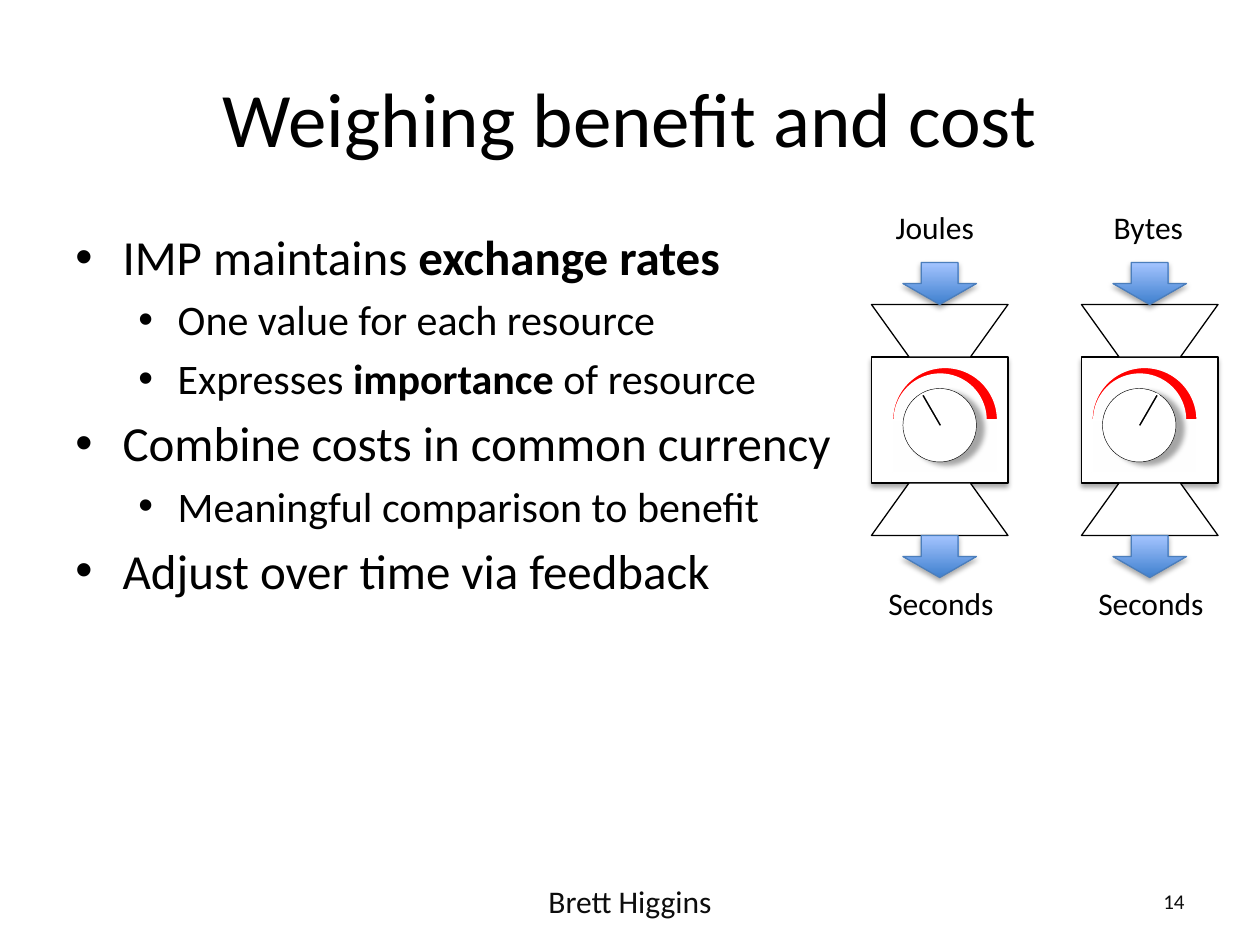
from lxml import etree
from pptx import Presentation, util as u
from pptx.dml.color import RGBColor
from pptx.enum import shapes, text
from pptx.oxml import ns

Pt = u.Pt
Kind = shapes.MSO_SHAPE
Align = text.PP_ALIGN
color = RGBColor.from_string

deck = Presentation()
deck.slide_width, deck.slide_height = Pt(720), Pt(540)
page = deck.slides.add_slide(deck.slide_layouts[5])


def add_shape(kind, left, top, width, height, fill="FFFFFF", line="000000", weight=0.75, shadow=None):
    shape = page.shapes.add_shape(kind, Pt(left), Pt(top), Pt(width), Pt(height))
    shape.fill.solid()
    shape.fill.fore_color.rgb = color(fill)
    shape.line.color.rgb = color(line)
    shape.line.width = Pt(weight)
    shape.shadow.inherit = False
    if shadow:
        distance, angle = shadow
        effects = shape._element.spPr.find(ns.qn("a:effectLst"))
        outer = etree.SubElement(effects, ns.qn("a:outerShdw"), blurRad=str(Pt(3.1)),
                                 dist=str(Pt(distance)), dir=str(angle * 60000), rotWithShape="0")
        black = etree.SubElement(outer, ns.qn("a:srgbClr"), val="000000")
        etree.SubElement(black, ns.qn("a:alpha"), val="35000")
    return shape


def add_label(words, left, top, width, height, size=18, align=Align.LEFT, wrap=False,
              ink="000000", anchor=text.MSO_ANCHOR.TOP):
    box = page.shapes.add_textbox(Pt(left), Pt(top), Pt(width), Pt(height))
    box.text_frame.word_wrap = wrap
    box.text_frame.vertical_anchor = anchor
    para = box.text_frame.paragraphs[0]
    para.text = words
    para.alignment = align
    para.font.name, para.font.size = "Calibri", Pt(size)
    para.font.color.rgb = color(ink)


title = page.shapes.title
title.left, title.top, title.width, title.height = Pt(36), Pt(21.6), Pt(648), Pt(90)
title.text_frame.text = "Weighing benefit and cost"
title.text_frame.vertical_anchor = text.MSO_ANCHOR.MIDDLE
para = title.text_frame.paragraphs[0]
para.alignment = Align.CENTER
para.font.name, para.font.size = "Calibri", Pt(44)
para.font.color.rgb = color("000000")

bullets = [
    (0, [("IMP maintains ", False), ("exchange rates", True)]),
    (1, [("One value for each resource", False)]),
    (1, [("Expresses ", False), ("importance", True), (" of resource", False)]),
    (0, [("Combine costs in common currency", False)]),
    (1, [("Meaningful comparison to benefit", False)]),
    (0, [("Adjust over time via feedback", False)]),
]
levels = [(28, 27, -27), (24, 58.5, -22.5)]
box = page.shapes.add_textbox(Pt(36), Pt(126), Pt(648), Pt(356.4))
box.text_frame.word_wrap = True
for index, (level, spans) in enumerate(bullets):
    size, margin, indent = levels[level]
    para = box.text_frame.paragraphs[0] if index == 0 else box.text_frame.add_paragraph()
    para.level = level
    para.space_before = Pt(size * 0.2 if index else 0)
    properties = para._p.get_or_add_pPr()
    properties.set("marL", str(Pt(margin)))
    properties.set("indent", str(Pt(indent)))
    etree.SubElement(properties, ns.qn("a:buFont"), typeface="Arial")
    etree.SubElement(properties, ns.qn("a:buChar"), char="•")
    para.font.name, para.font.size = "Calibri", Pt(size)
    para.font.color.rgb = color("000000")
    for words, bold in spans:
        span = para.add_run()
        span.text = words
        if bold:
            span.font.bold = True

middle = text.MSO_ANCHOR.MIDDLE
add_label("Brett Higgins", 246, 500.5, 228, 28.75, 18, Align.CENTER, True, "0D0D0D", middle)
add_label("14", 516, 500.5, 168, 28.75, 12, Align.RIGHT, True, "0D0D0D", middle)

soft = (1.8, 90)
meters = [
    (498, 510, 531.4, 330, "Joules", 504.7, 59.8),
    (618, 624, 655.2, 30, "Bytes", 629.3, 54.7),
]
for left, dial, needle_left, turn, unit, unit_left, unit_width in meters:
    add_shape(Kind.RECTANGLE, left, 204, 78, 72, shadow=soft)

    add_shape(Kind.OVAL, dial, 210, 60, 60, "FF0000", "FFFFFF")
    add_shape(Kind.OVAL, dial + 1, 213.75, 52.5, 52.5, "FEFEFE", "FFFFFF")
    add_shape(Kind.RECTANGLE, dial, 240, 60, 30, "FEFEFE", "FFFFFF")
    add_shape(Kind.OVAL, dial + 6, 222, 42, 42, weight=0.25, shadow=(4.8, 24))
    needle = add_shape(Kind.RECTANGLE, needle_left, 224, 2, 21, "000000", "FFFFFF", 1)
    needle.rotation = turn

    for top, rotation in [(174, 180), (276, 0)]:
        funnel = add_shape(Kind.TRAPEZOID, left, top, 78, 30)
        funnel.adjustments[0] = 0.717
        funnel.rotation = rotation

    for top in (150, 306):
        arrow = add_shape(Kind.DOWN_ARROW, left + 18, top, 42, 24, line="4B7EBC", shadow=soft)
        arrow.fill.gradient()
        arrow.fill.gradient_angle = 90
        for stop, shade in zip(arrow.fill.gradient_stops, ("3F80CE", "A4C4FF")):
            stop.color.rgb = color(shade)

    add_label(unit, unit_left, 115.2, unit_width, 29)
    add_label("Seconds", left + 2.5, 330, 75.6, 29)

deck.save("out.pptx")
